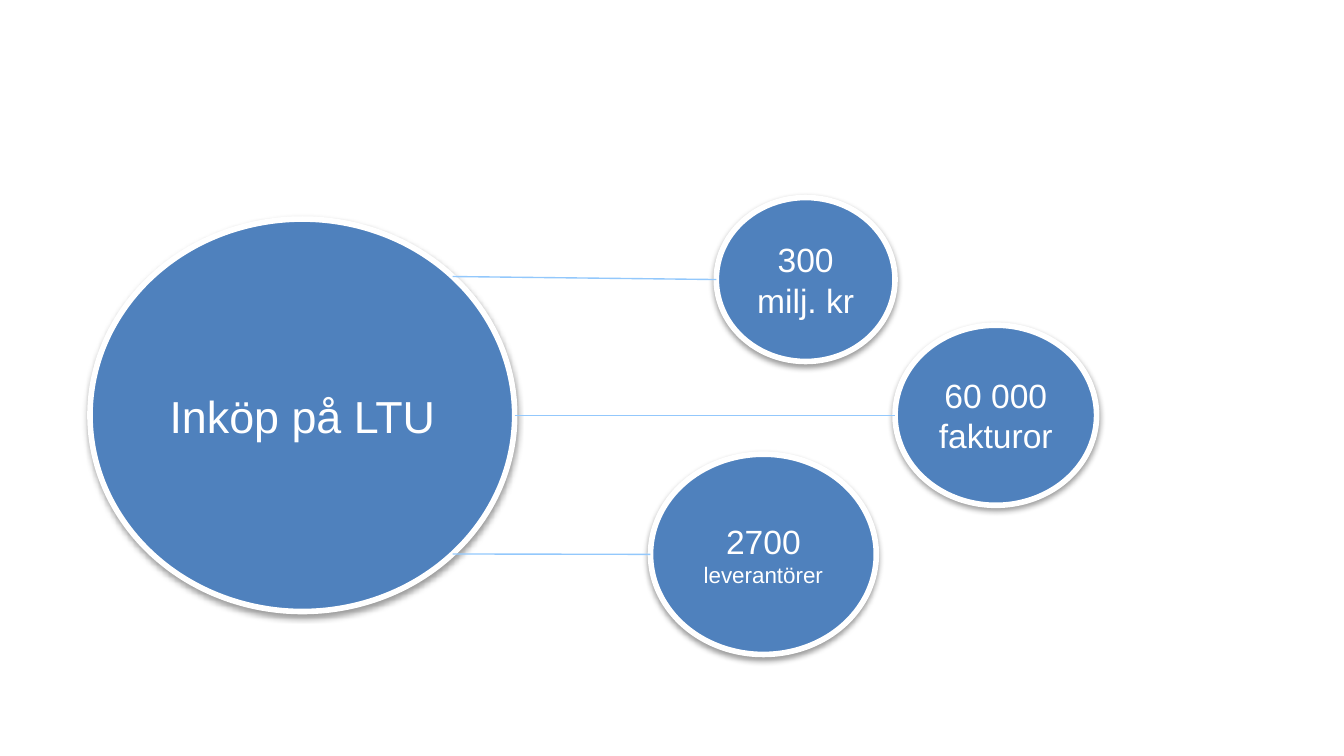
import math

import pptx
import pptx.dml.color
import pptx.enum.shapes
import pptx.enum.text
import pptx.oxml
import pptx.oxml.ns
import pptx.util

COLORS = {"circle": "4F81BD", "white": "FFFFFF", "link": "93C8FC", "shadow": "000000"}
FONT = "Arial"
SLIDE_WIDTH = pptx.util.Inches(10)
SLIDE_HEIGHT = SLIDE_WIDTH * 9 // 16
COLUMN = ROW = SLIDE_WIDTH / 100

HUB = (6.7, 16.3, 31.6, 29.2)
FACTS = [
    ((53.3, 14.7, 13.3, 12.2), [("300 milj. kr", 18)], -45),
    ((66.6, 24.2, 15, 13.4), [("60 000 fakturor", 18)], 0),
    ((48.4, 33.8, 16.8, 14.9), [("2700 ", 18), ("leverantörer", 12)], 45),
]


def color(name):
    """Return the named colour."""
    return pptx.dml.color.RGBColor.from_string(COLORS[name])


def add_span(para, text, size, tint="white"):
    """Add one formatted run of text to a paragraph."""
    span = para.add_run()
    span.text = text
    span.font.name = FONT
    span.font.size = pptx.util.Pt(size)
    span.font.color.rgb = color(tint)


def set_effects(shape, content=""):
    """Give a shape or connector exactly the effects in content."""
    shape._element.spPr.append(pptx.oxml.parse_xml(
        f'<a:effectLst {pptx.oxml.ns.nsdecls("a")}>{content}</a:effectLst>'))


def add_circle(page, box, spans):
    """Draw a white-rimmed circle with centred text and a soft shadow."""
    left, top, width, height = box
    circle = page.shapes.add_shape(
        pptx.enum.shapes.MSO_SHAPE.OVAL,
        round(left * COLUMN), round(top * ROW),
        round(width * COLUMN), round(height * ROW))
    circle.fill.solid()
    circle.fill.fore_color.rgb = color("circle")
    circle.line.color.rgb = color("white")
    circle.line.width = pptx.util.Pt(3)
    set_effects(circle, (
        '<a:outerShdw blurRad="40000" dist="20000" dir="5400000" rotWithShape="0">'
        f'<a:srgbClr val="{COLORS["shadow"]}"><a:alpha val="38000"/></a:srgbClr>'
        '</a:outerShdw>'))
    frame = circle.text_frame
    frame.word_wrap = True
    frame.vertical_anchor = pptx.enum.text.MSO_ANCHOR.MIDDLE
    para = frame.paragraphs[0]
    para.alignment = pptx.enum.text.PP_ALIGN.CENTER
    for text, size in spans:
        add_span(para, text, size)


def rim_point(box, angle):
    """Return the column and row on a circle's rim at an angle in degrees."""
    left, top, width, height = box
    turn = math.radians(angle)
    return (left + width / 2 * (1 + math.cos(turn)),
            top + height / 2 * (1 + math.sin(turn)))


def add_link(page, start, end):
    """Draw a thin line between two grid points."""
    link = page.shapes.add_connector(
        pptx.enum.shapes.MSO_CONNECTOR.STRAIGHT,
        round(start[0] * COLUMN), round(start[1] * ROW),
        round(end[0] * COLUMN), round(end[1] * ROW))
    link.line.color.rgb = color("link")
    link.line.width = pptx.util.Pt(0.75)
    set_effects(link)


def add_fact(page, hub, box, spans, angle):
    """Draw a fact circle and its link from the hub's rim."""
    add_circle(page, box, spans)
    add_link(page, rim_point(hub, angle), rim_point(box, 180))


def main():
    """Build and save the purchasing slide."""
    deck = pptx.Presentation()
    deck.slide_width, deck.slide_height = SLIDE_WIDTH, SLIDE_HEIGHT
    page = deck.slides.add_slide(deck.slide_layouts[6])
    add_circle(page, HUB, [("Inköp på LTU ", 24)])
    for box, spans, angle in FACTS:
        add_fact(page, HUB, box, spans, angle)
    deck.save("out.pptx")


if __name__ == "__main__":
    main()
